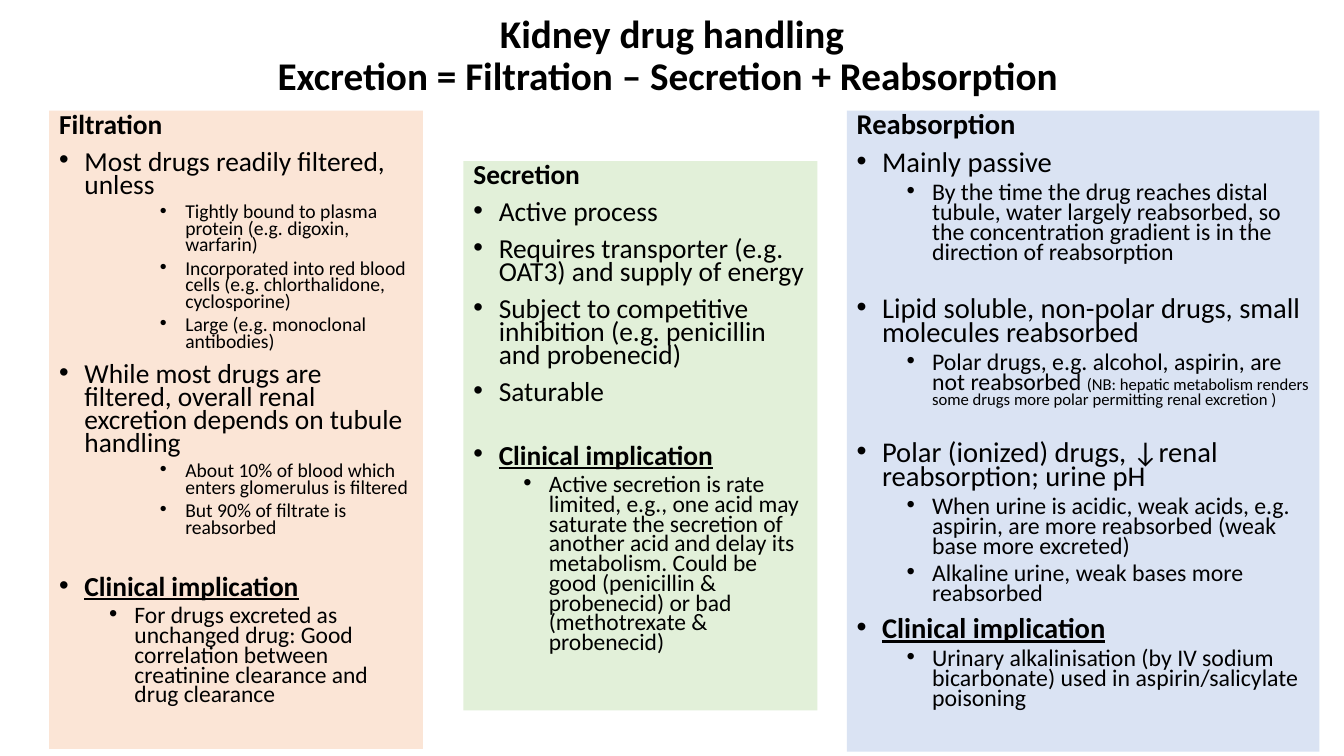
from dataclasses import dataclass

from lxml import etree
from pptx import Presentation
from pptx.dml.color import RGBColor
from pptx.enum.shapes import MSO_SHAPE
from pptx.enum.text import MSO_ANCHOR, PP_ALIGN
from pptx.oxml.ns import qn
from pptx.util import Cm, Pt

RECTANGLE = MSO_SHAPE.RECTANGLE
LEFT, CENTER = PP_ALIGN.LEFT, PP_ALIGN.CENTER
TOP, MIDDLE = MSO_ANCHOR.TOP, MSO_ANCHOR.MIDDLE

# Paragraph kinds
HEADING, POINT, IMPLICATION, DETAIL, EXAMPLE = range(5)
INDENTS = {POINT: 0.64, IMPLICATION: 0.64, DETAIL: 1.9, EXAMPLE: 3.18}
HANGING = 0.64


@dataclass(frozen=True)
class Theme:
    font: str = "Calibri"
    ink: str = "000000"
    peach: str = "FBE5D6"
    green: str = "E2F0D9"
    blue: str = "DAE3F3"
    title_size: float = 28
    example_size: float = 14
    note_size: float = 11.9
    narrow_sizes: tuple = (19.6, 16.8)  # main text, detail
    wide_sizes: tuple = (20.4, 17)


@dataclass
class Item:
    """One paragraph; gap is extra space above it in points, note a smaller ending."""
    kind: int
    text: str
    gap: float = 0
    note: str = ""


FILTRATION = [
    Item(HEADING, "Filtration"),
    Item(POINT, "Most drugs readily filtered, unless"),
    Item(EXAMPLE, "Tightly bound to plasma protein (e.g. digoxin, warfarin)"),
    Item(EXAMPLE, "Incorporated into red blood cells (e.g. chlorthalidone, cyclosporine)"),
    Item(EXAMPLE, "Large (e.g. monoclonal antibodies)"),
    Item(POINT, "While most drugs are filtered, overall renal excretion depends on tubule handling"),
    Item(EXAMPLE, "About 10% of blood which enters glomerulus is filtered"),
    Item(EXAMPLE, "But 90% of filtrate is reabsorbed"),
    Item(IMPLICATION, "Clinical implication", gap=19),
    Item(DETAIL, "For drugs excreted as unchanged drug: Good correlation between "
                 "creatinine clearance and drug clearance"),
]
SECRETION = [
    Item(HEADING, "Secretion"),
    Item(POINT, "Active process"),
    Item(POINT, "Requires transporter (e.g. OAT3) and supply of energy"),
    Item(POINT, "Subject to competitive inhibition (e.g. penicillin and probenecid)"),
    Item(POINT, "Saturable"),
    Item(IMPLICATION, "Clinical implication", gap=19),
    Item(DETAIL, "Active secretion is rate limited, e.g., one acid may saturate the "
                 "secretion of another acid and delay its metabolism. Could be good "
                 "(penicillin & probenecid) or bad (methotrexate & probenecid)"),
]
REABSORPTION = [
    Item(HEADING, "Reabsorption"),
    Item(POINT, "Mainly passive"),
    Item(DETAIL, "By the time the drug reaches distal tubule, water largely reabsorbed, "
                 "so the concentration gradient is in the direction of reabsorption"),
    Item(POINT, "Lipid soluble, non-polar drugs, small molecules reabsorbed", gap=15),
    Item(DETAIL, "Polar drugs, e.g. alcohol, aspirin, are not reabsorbed ",
         note="(NB: hepatic metabolism renders some drugs more polar permitting renal excretion )"),
    Item(POINT, "Polar (ionized) drugs, ↓renal reabsorption; urine pH", gap=15),
    Item(DETAIL, "When urine is acidic, weak acids, e.g. aspirin, are more reabsorbed "
                 "(weak base more excreted)"),
    Item(DETAIL, "Alkaline urine, weak bases more reabsorbed"),
    Item(IMPLICATION, "Clinical implication"),
    Item(DETAIL, "Urinary alkalinisation (by IV sodium bicarbonate) used in "
                 "aspirin/salicylate poisoning"),
]


class SlideBuilder:
    def __init__(self, page, theme):
        self.page = page
        self.theme = theme

    def style(self, span, size, bold=False, underline=False):
        font = span.font
        font.name = self.theme.font
        font.size = Pt(size)
        font.bold = bold
        font.underline = underline
        font.color.rgb = RGBColor.from_string(self.theme.ink)

    def title(self, text, left, top, width, height):
        box = self.page.shapes.add_textbox(Cm(left), Cm(top), Cm(width), Cm(height))
        frame = box.text_frame
        frame.word_wrap = True
        frame.vertical_anchor = MIDDLE
        frame.text = text
        para = frame.paragraphs[0]
        para.alignment = CENTER
        para.line_spacing = 0.9
        for span in para.runs:
            self.style(span, self.theme.title_size, bold=True)

    def bullet(self, para, indent):
        properties = para._p.get_or_add_pPr()
        properties.set("marL", str(Cm(indent)))
        properties.set("indent", str(-Cm(HANGING)))
        etree.SubElement(properties, qn("a:buFont"), typeface="Arial")
        etree.SubElement(properties, qn("a:buChar"), char="•")

    def paragraph(self, para, item, sizes):
        main_size, detail_size = sizes
        size = {DETAIL: detail_size, EXAMPLE: self.theme.example_size}.get(item.kind, main_size)
        para.text = item.text
        para.alignment = LEFT
        para.line_spacing = 0.7
        para.space_before = Pt((5 if item.kind in (DETAIL, EXAMPLE) else 10) + item.gap)
        if item.kind in INDENTS:
            self.bullet(para, INDENTS[item.kind])
        self.style(para.runs[0], size, bold=item.kind in (HEADING, IMPLICATION),
                   underline=item.kind == IMPLICATION)
        if item.note:
            note = para.add_run()
            note.text = item.note
            self.style(note, self.theme.note_size)

    def panel(self, items, fill, sizes, left, top, width, height):
        box = self.page.shapes.add_shape(RECTANGLE, Cm(left), Cm(top), Cm(width), Cm(height))
        box.shadow.inherit = False
        box.fill.solid()
        box.fill.fore_color.rgb = RGBColor.from_string(fill)
        box.line.fill.background()
        frame = box.text_frame
        frame.word_wrap = True
        frame.vertical_anchor = TOP
        for index, item in enumerate(items):
            para = frame.add_paragraph() if index else frame.paragraphs[0]
            self.paragraph(para, item, sizes)


def main():
    deck = Presentation()
    deck.slide_width, deck.slide_height = Cm(33.87), Cm(19.05)
    theme = Theme()
    builder = SlideBuilder(deck.slides.add_slide(deck.slide_layouts[6]), theme)
    builder.title("Kidney drug handling\vExcretion = Filtration – Secretion + Reabsorption ",
                  6.71, 0.08, 20.45, 2.72)
    builder.panel(FILTRATION, theme.peach, theme.narrow_sizes, 1.24, 2.79, 9.42, 16.08)
    builder.panel(SECRETION, theme.green, theme.narrow_sizes, 11.68, 4.06, 8.92, 13.84)
    builder.panel(REABSORPTION, theme.blue, theme.wide_sizes, 21.34, 2.79, 11.91, 16.15)
    deck.save("out.pptx")


if __name__ == "__main__":
    main()
